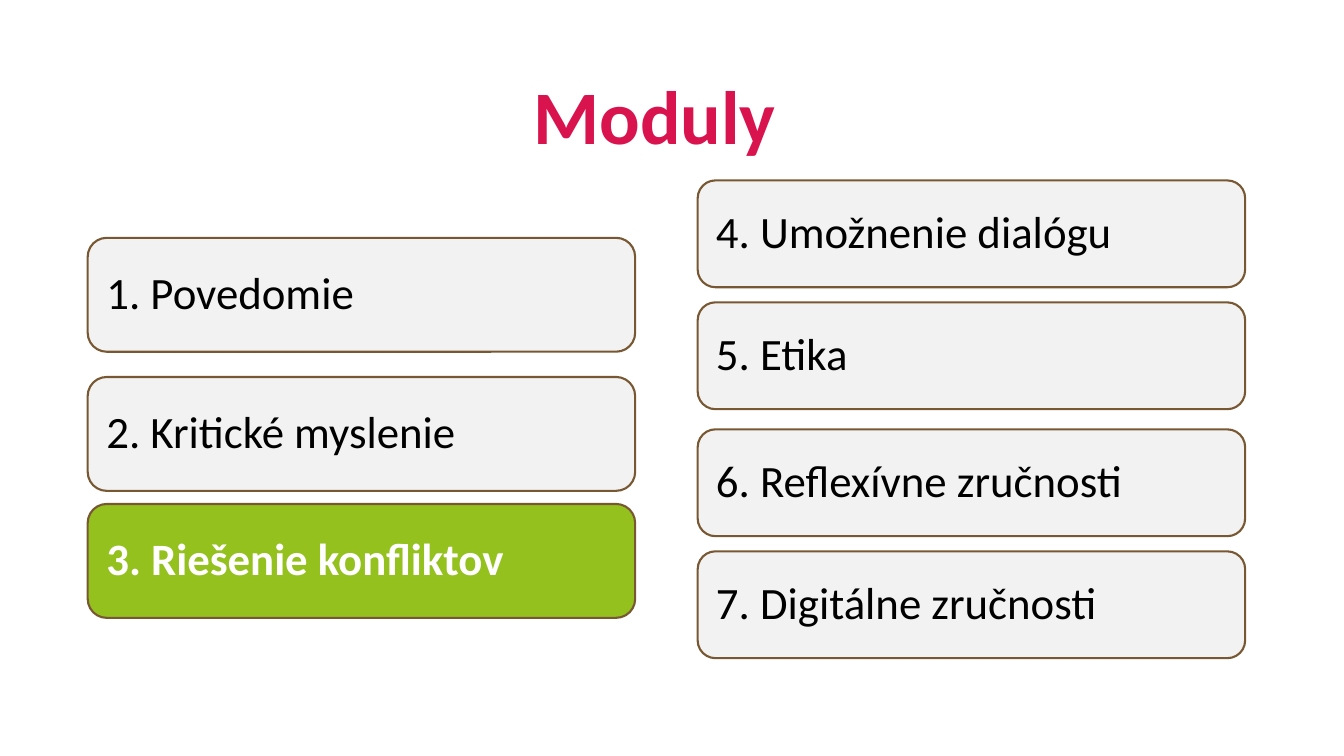
import dataclasses

import pptx
import pptx.dml.color
import pptx.enum.shapes
import pptx.enum.text
import pptx.util

Inches = pptx.util.Inches
Pt = pptx.util.Pt
Color = pptx.dml.color.RGBColor.from_string


@dataclasses.dataclass(frozen=True)
class Theme:
    """Fonts, type sizes, colours and line width of the slide."""
    font: str = "Calibri"
    title_size: int = 54
    module_size: int = 32
    title: str = "D8134D"
    text: str = "000000"
    current_text: str = "FFFFFF"
    panel: str = "F2F2F2"
    current_panel: str = "95C11F"
    border: str = "785832"
    border_width: float = 1.5


THEME = Theme()
SLIDE_WIDTH, SLIDE_HEIGHT = 13.33, 7.5
CURRENT_MODULE = "3. Riešenie konfliktov"
LEFT_MODULES = {"1. Povedomie": 0, "2. Kritické myslenie": 1.38, CURRENT_MODULE: 2.64}
RIGHT_MODULES = {
    "4. Umožnenie dialógu": 0,
    "5. Etika": 1.21,
    "6. Reflexívne zručnosti": 2.47,
    "7. Digitálne zručnosti": 3.68,
}


def write_line(frame, wording, size, color, bold, align):
    """Write one styled run into the first paragraph of a text frame."""
    paragraph = frame.paragraphs[0]
    paragraph.alignment = align
    paragraph.line_spacing = 0.9
    run = paragraph.add_run()
    run.text = wording
    run.font.name = THEME.font
    run.font.size = Pt(size)
    run.font.bold = bold
    run.font.color.rgb = Color(color)


def place_title(slide, box, wording):
    """Move the title placeholder into its box and write the heading."""
    title = slide.shapes.title
    title.left, title.top, title.width, title.height = map(Inches, box)
    frame = title.text_frame
    frame.auto_size = pptx.enum.text.MSO_AUTO_SIZE.NONE
    frame.vertical_anchor = pptx.enum.text.MSO_ANCHOR.BOTTOM
    write_line(frame, wording, THEME.title_size, THEME.title, True,
               pptx.enum.text.PP_ALIGN.CENTER)


def add_module(column, box, wording):
    """Add one module panel, highlighted when it is the current module."""
    current = wording == CURRENT_MODULE
    panel = column.shapes.add_shape(
        pptx.enum.shapes.MSO_SHAPE.ROUNDED_RECTANGLE, *map(Inches, box))
    panel.shadow.inherit = False
    panel.fill.solid()
    panel.fill.fore_color.rgb = Color(THEME.current_panel if current else THEME.panel)
    panel.line.color.rgb = Color(THEME.border)
    panel.line.width = Pt(THEME.border_width)
    frame = panel.text_frame
    frame.word_wrap = True
    frame.vertical_anchor = pptx.enum.text.MSO_ANCHOR.MIDDLE
    frame.margin_left = frame.margin_right = Inches(0.13)
    frame.margin_top = frame.margin_bottom = Inches(0.13)
    write_line(frame, wording, THEME.module_size,
               THEME.current_text if current else THEME.text, current,
               pptx.enum.text.PP_ALIGN.LEFT)


def add_column(slide, box, modules, panel_height):
    """Group the module panels at their offsets from the top of the box."""
    left, top, width = box
    column = slide.shapes.add_group_shape()
    for wording, offset in modules.items():
        add_module(column, (left, top + offset, width, panel_height), wording)


def main():
    """Build the modules slide and save it."""
    deck = pptx.Presentation()
    deck.slide_width, deck.slide_height = Inches(SLIDE_WIDTH), Inches(SLIDE_HEIGHT)
    slide = deck.slides.add_slide(deck.slide_layouts.get_by_name("Title Only"))
    place_title(slide, (0.01, -0.3, 12.97, 1.95), "Moduly")
    add_column(slide, (0.87, 2.36, 5.43), LEFT_MODULES, 1.13)
    add_column(slide, (6.92, 1.79, 5.43), RIGHT_MODULES, 1.06)
    deck.save("out.pptx")


if __name__ == "__main__":
    main()
